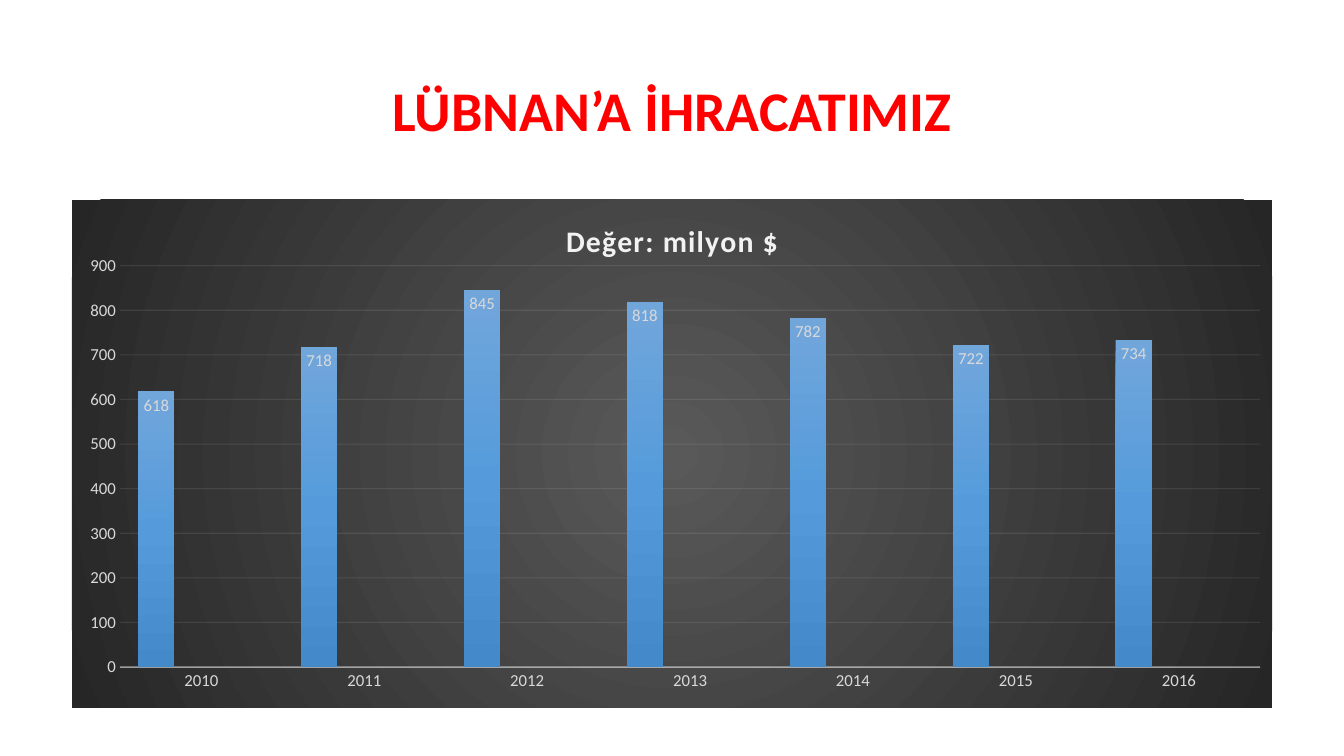
from lxml.etree import SubElement
from pptx import Presentation
from pptx.chart.data import CategoryChartData
from pptx.dml.color import RGBColor
from pptx.enum.chart import XL_CHART_TYPE, XL_LABEL_POSITION, XL_TICK_MARK
from pptx.enum.text import MSO_ANCHOR, MSO_AUTO_SIZE, PP_ALIGN
from pptx.oxml import parse_xml
from pptx.oxml.ns import nsdecls, qn
from pptx.util import Pt

FONT = "Calibri"
YEARS = [str(year) for year in range(2010, 2017)]
EXPORTS = (618, 718, 845, 818, 782, 722, 734)
NO_VALUES = (None,) * len(YEARS)
SERIES = [
    ("Series 1", EXPORTS, ("71A6DB", "559BDB", "448ACA")),
    ("Series 2", NO_VALUES, ("AFAFAF", "A5A5A5", "939393")),
    ("Series 3", NO_VALUES, ("6183CB", "3E70CA", "3062BB")),
]
LINEAR = '<a:lin ang="5400000" scaled="0"/>'
RADIAL = ('<a:path path="circle"><a:fillToRect l="50000" t="50000" '
          'r="50000" b="50000"/></a:path>')


def colour(value):
    return RGBColor.from_string(value)


def style_font(font, size, value, bold=False):
    font.name, font.size, font.bold = FONT, Pt(size), bold
    font.color.rgb = colour(value)


def gradient(colours, direction):
    """Gradient fill with evenly spaced stops."""
    step = 100000 // (len(colours) - 1)
    stops = "".join(
        f'<a:gs pos="{index * step}"><a:srgbClr val="{value}"/></a:gs>'
        for index, value in enumerate(colours))
    return (f'<a:gradFill {nsdecls("a")} rotWithShape="1">'
            f'<a:gsLst>{stops}</a:gsLst>{direction}</a:gradFill>')


def style_line(line, width, value, opacity):
    line.width = Pt(width)
    line.color.rgb = colour(value)
    for shade in line._ln.iter(qn("a:srgbClr")):
        SubElement(shade, qn("a:alpha"), val=str(opacity * 1000))


def add_title(page, left, top, width, height):
    title = page.shapes.title
    title.left, title.top = Pt(left), Pt(top)
    title.width, title.height = Pt(width), Pt(height)
    frame = title.text_frame
    frame.text = "LÜBNAN’A İHRACATIMIZ"
    frame.auto_size = MSO_AUTO_SIZE.NONE
    frame.vertical_anchor = MSO_ANCHOR.MIDDLE
    para = frame.paragraphs[0]
    para.alignment, para.line_spacing = PP_ALIGN.CENTER, 0.9
    style_font(para.runs[0].font, 40, "FF0000", bold=True)


def style_chart_title(chart):
    chart.has_title = True
    chart.chart_title.include_in_layout = False
    frame = chart.chart_title.text_frame
    frame.text = "Değer: milyon $"
    span = frame.paragraphs[0].runs[0]
    style_font(span.font, 21.3, "F2F2F2", bold=True)
    span.font._element.set("spc", "100")


def style_axes(chart):
    for axis in (chart.category_axis, chart.value_axis):
        axis.major_tick_mark = axis.minor_tick_mark = XL_TICK_MARK.NONE
        style_font(axis.tick_labels.font, 12, "D9D9D9")
    style_line(chart.category_axis.format.line, 1, "F2F2F2", 54)
    values = chart.value_axis
    values.minimum_scale, values.maximum_scale, values.major_unit = 0, 900, 100
    values.format.line.fill.background()
    values.has_major_gridlines = True
    style_line(values.major_gridlines.format.line, 0.75, "F2F2F2", 10)


def style_bars(plot):
    plot.gap_width, plot.overlap, plot.vary_by_categories = 100, -24, False
    for bars, (_, _, colours) in zip(plot.series, SERIES):
        bars.format.fill.solid()
        solid = bars.format.fill._xPr.find(qn("a:solidFill"))
        solid.getparent().replace(solid, parse_xml(gradient(colours, LINEAR)))
        labels = bars.data_labels
        labels.show_value = True
        labels.position = XL_LABEL_POSITION.INSIDE_END
        style_font(labels.font, 12, "D9D9D9")


def place_plot(chart, left, top, width, height):
    """Inner plot area, as fractions of the chart."""
    area = chart.element.find(".//" + qn("c:plotArea"))
    for layout in area.findall(qn("c:layout")):
        area.remove(layout)
    sizes = "".join(f'<c:{name} val="{value}"/>' for name, value in
                    zip("xywh", (left, top, width, height)))
    area.insert(0, parse_xml(
        f'<c:layout {nsdecls("c")}><c:manualLayout>'
        '<c:layoutTarget val="inner"/><c:xMode val="edge"/>'
        f'<c:yMode val="edge"/>{sizes}</c:manualLayout></c:layout>'))


def add_export_chart(page, left, top, width, height):
    data = CategoryChartData()
    data.categories = YEARS
    for name, values, _ in SERIES:
        data.add_series(name, values)
    chart = page.shapes.add_chart(
        XL_CHART_TYPE.COLUMN_CLUSTERED, Pt(left), Pt(top),
        Pt(width), Pt(height), data).chart
    chart.has_legend = False
    style_font(chart.font, 10, "000000")
    style_chart_title(chart)
    style_axes(chart)
    style_bars(chart.plots[0])
    place_plot(chart, 0.04, 0.13, 0.95, 0.79)
    # Dark radial background
    chart.element.find(qn("c:chart")).addnext(parse_xml(
        f'<c:spPr {nsdecls("c", "a")}>{gradient(("595959", "262626"), RADIAL)}'
        '<a:ln><a:noFill/></a:ln></c:spPr>'))


def main():
    deck = Presentation()
    deck.slide_width, deck.slide_height = Pt(960), Pt(540)
    page = deck.slides.add_slide(deck.slide_layouts[5])
    add_title(page, 66, 29, 828, 104)
    add_export_chart(page, 51.4, 142.6, 857.4, 363)
    deck.save("out.pptx")


if __name__ == "__main__":
    main()
